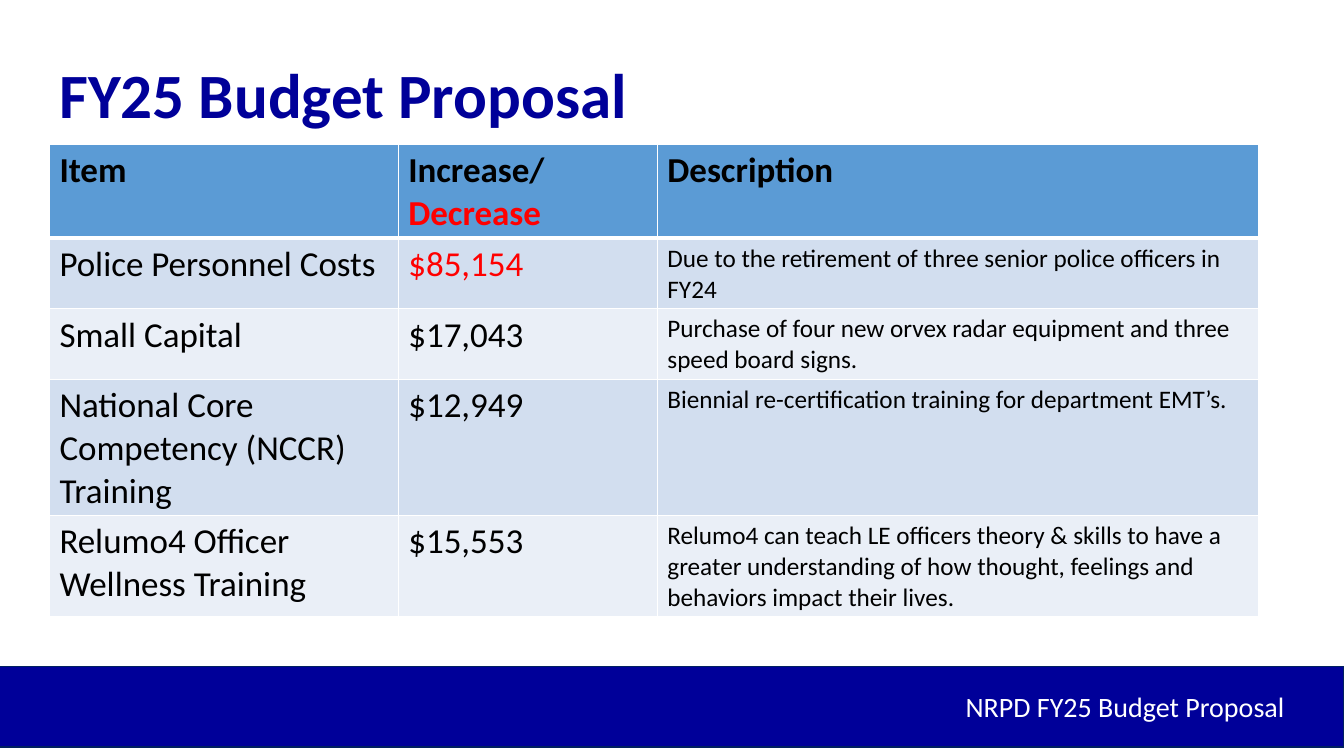
from lxml import etree
from pptx import Presentation
from pptx.dml.color import RGBColor
from pptx.enum.shapes import MSO_SHAPE
from pptx.enum.text import PP_ALIGN
from pptx.oxml.ns import qn
from pptx.util import Inches, Pt

RECTANGLE = MSO_SHAPE.RECTANGLE
LEFT, RIGHT = PP_ALIGN.LEFT, PP_ALIGN.RIGHT

NAVY = RGBColor(0x00, 0x00, 0x99)
BAR_EDGE = RGBColor(0x00, 0x20, 0x60)
HEADER_BLUE = RGBColor(0x5B, 0x9B, 0xD5)
BANDS = (RGBColor(0xD2, 0xDE, 0xEF), RGBColor(0xEA, 0xEF, 0xF7))
BLACK = RGBColor(0x00, 0x00, 0x00)
RED = RGBColor(0xFF, 0x00, 0x00)
WHITE = RGBColor(0xFF, 0xFF, 0xFF)

FONT = "Calibri"
TITLE = "FY25 Budget Proposal"
FOOTER = "NRPD FY25 Budget Proposal"

# Each cell is a list of (text, colour) runs.
ROWS = [
    ([("Item", BLACK)],
     [("Increase/ ", BLACK), ("Decrease", RED)],
     [("Description", BLACK)]),
    ([("Police Personnel Costs", BLACK)],
     [("$85,154", RED)],
     [("Due to the retirement of three senior police officers in FY24", BLACK)]),
    ([("Small Capital", BLACK)],
     [("$17,043", BLACK)],
     [("Purchase of four new orvex radar equipment and three speed board signs.", BLACK)]),
    ([("National Core Competency (NCCR) Training", BLACK)],
     [("$12,949", BLACK)],
     [("Biennial re-certification training for department EMT’s.", BLACK)]),
    ([("Relumo4 Officer Wellness Training", BLACK)],
     [("$15,553", BLACK)],
     [("Relumo4 can teach LE officers theory & skills to have a greater understanding "
       "of how thought, feelings and behaviors impact their lives.", BLACK)]),
]

PAGE_WIDTH, PAGE_HEIGHT = 13.33, 7.5
MARGIN = 0.49
COLUMN_WIDTHS = (3.46, 2.57, 5.96)
ROW_HEIGHTS = (0.92, 0.7, 0.7, 1.35, 0.98)
TABLE_TOP = 1.43
BAR_OVERHANG = 0.41


def add_span(para, text, size, color, bold=False):
    span = para.add_run()
    span.text = text
    span.font.name = FONT
    span.font.size = Pt(size)
    span.font.bold = bold
    span.font.color.rgb = color


def add_label(page, area, text, size, color, align=LEFT, bold=False):
    box = page.shapes.add_textbox(*map(Inches, area))
    box.text_frame.word_wrap = True
    para = box.text_frame.paragraphs[0]
    para.alignment = align
    add_span(para, text, size, color, bold)


def add_borders(cell, bottom_width):
    """Give a cell white 1 pt edges, with its own bottom width in points."""
    properties = cell._tc.get_or_add_tcPr()
    widths = {"a:lnL": 1, "a:lnR": 1, "a:lnT": 1, "a:lnB": bottom_width}
    for place, (tag, width) in enumerate(widths.items()):
        edge = etree.Element(qn(tag), w=str(Pt(width)))
        fill = etree.SubElement(edge, qn("a:solidFill"))
        etree.SubElement(fill, qn("a:srgbClr"), val=str(WHITE))
        properties.insert(place, edge)


def add_budget_table(page):
    frame = page.shapes.add_table(
        len(ROWS), len(COLUMN_WIDTHS), Inches(MARGIN), Inches(TABLE_TOP),
        Inches(sum(COLUMN_WIDTHS)), Inches(sum(ROW_HEIGHTS)))
    table = frame.table
    for column, width in zip(table.columns, COLUMN_WIDTHS):
        column.width = Inches(width)
    for row, height in zip(table.rows, ROW_HEIGHTS):
        row.height = Inches(height)

    description_column = len(COLUMN_WIDTHS) - 1
    for row_index, row in enumerate(ROWS):
        is_header = row_index == 0
        for column_index, spans in enumerate(row):
            cell = table.cell(row_index, column_index)
            cell.fill.solid()
            cell.fill.fore_color.rgb = HEADER_BLUE if is_header else BANDS[(row_index - 1) % 2]
            add_borders(cell, 3 if is_header else 1)
            size = 18 if column_index == description_column and not is_header else 25
            for text, color in spans:
                add_span(cell.text_frame.paragraphs[0], text, size, color, is_header)


def add_footer_bar(page):
    bar = page.shapes.add_shape(
        RECTANGLE, Inches(-BAR_OVERHANG), Inches(6.61),
        Inches(PAGE_WIDTH + BAR_OVERHANG), Inches(0.8))
    bar.shadow.inherit = False
    bar.fill.solid()
    bar.fill.fore_color.rgb = NAVY
    bar.line.color.rgb = BAR_EDGE
    bar.line.width = Pt(1)


def main():
    deck = Presentation()
    deck.slide_width, deck.slide_height = Inches(PAGE_WIDTH), Inches(PAGE_HEIGHT)
    page = deck.slides.add_slide(deck.slide_layouts[6])
    content_width = PAGE_WIDTH - 2 * MARGIN
    footer_left = 6.16

    add_footer_bar(page)
    add_label(page, (MARGIN, 0.5, content_width, 0.85), TITLE, 45, NAVY, bold=True)
    add_label(page, (footer_left, 6.79, PAGE_WIDTH - MARGIN - footer_left, 0.7),
              FOOTER, 20, WHITE, align=RIGHT)
    add_budget_table(page)
    deck.save("out.pptx")


if __name__ == "__main__":
    main()
